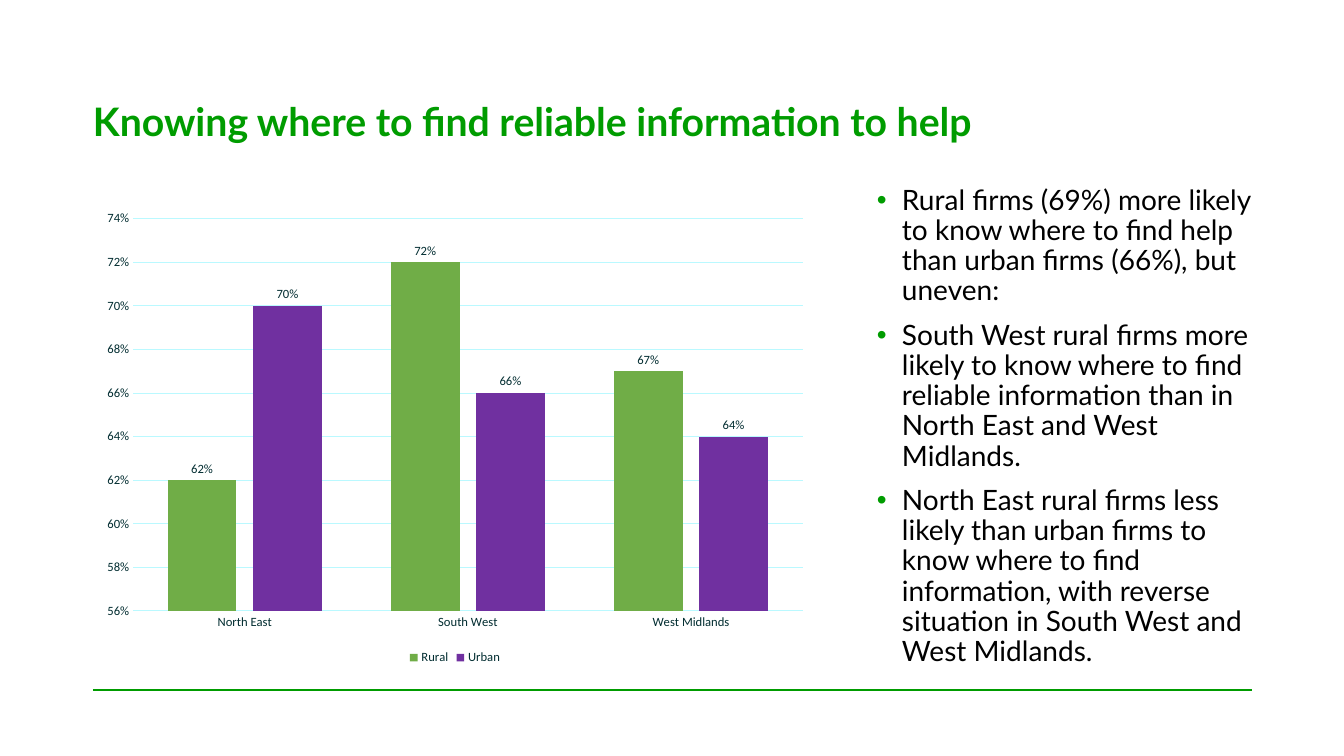
import pptx
import pptx.chart.data
import pptx.dml.color
import pptx.enum.chart
import pptx.enum.shapes
import pptx.enum.text
import pptx.oxml
import pptx.oxml.ns
import pptx.util

TITLE = "Knowing where to find reliable information to help"
FINDINGS = [
    "Rural firms (69%) more likely to know where to find help than urban firms (66%), but uneven:",
    "South West rural firms more likely to know where to find reliable information than in North East and West Midlands.",
    "North East rural firms less likely than urban firms to know where to find information, "
    "with reverse situation in South West and West Midlands.",
]
REGIONS = ["North East", "South West", "West Midlands"]
SERIES = [
    ("Rural", [0.62, 0.72, 0.67], "70AD47"),
    ("Urban", [0.70, 0.66, 0.64], "7030A0"),
]
THEME = {
    "green": "009C00", "text": "000000", "chart_text": "002C30", "grid": "BAF9FF",
    "font": "Lato", "chart_font": "Calibri",
    "title_size": 28, "body_size": 20, "chart_size": 9,
}

SLIDE_WIDTH, SLIDE_HEIGHT = 1344, 756
LEFT, RIGHT = 93, 1252
TITLE_BOX = (LEFT, 73, RIGHT - LEFT, 114)
TITLE_GAP = 42
BODY_BOX = (877, 186, RIGHT - 877, 433)
CHART_BOX = (LEFT, 202, 724, 467)
RULE_Y = 690
INDENT = 25


def px(length):
    return pptx.util.Emu(round(length * 12192000 / SLIDE_WIDTH))


def color(name):
    return pptx.dml.color.RGBColor.from_string(THEME.get(name, name))


def style_font(font, family, size, color_name, bold=False):
    font.name = THEME[family]
    font.size = pptx.util.Pt(THEME[size])
    font.color.rgb = color(color_name)
    font.bold = bold


def style_line(line, color_name, width):
    line.color.rgb = color(color_name)
    line.width = pptx.util.Pt(width)


def add_text(slide, box, text):
    frame = slide.shapes.add_textbox(*map(px, box)).text_frame
    frame.word_wrap = True
    frame.margin_left = frame.margin_right = frame.margin_top = frame.margin_bottom = 0
    frame.text = text
    for paragraph in frame.paragraphs:
        paragraph.line_spacing = 0.9
    return frame


def add_bullet(paragraph):
    properties = paragraph._p.get_or_add_pPr()
    properties.set("marL", str(px(INDENT)))
    properties.set("indent", str(-px(INDENT)))
    namespace = pptx.oxml.ns.nsdecls("a")
    for xml in (
        f'<a:buClr {namespace}><a:srgbClr val="{THEME["green"]}"/></a:buClr>',
        f'<a:buFont {namespace} typeface="Arial"/>',
        f'<a:buChar {namespace} char="•"/>',
    ):
        properties.append(pptx.oxml.parse_xml(xml))


def add_rule(slide):
    rule = slide.shapes.add_connector(
        pptx.enum.shapes.MSO_CONNECTOR.STRAIGHT, px(LEFT), px(RULE_Y), px(RIGHT), px(RULE_Y))
    style_line(rule.line, "green", 1)
    rule._element.spPr.append(
        pptx.oxml.parse_xml(f'<a:effectLst {pptx.oxml.ns.nsdecls("a")}/>'))


def add_title(slide):
    frame = add_text(slide, TITLE_BOX, TITLE)
    frame.vertical_anchor = pptx.enum.text.MSO_ANCHOR.BOTTOM
    frame.margin_bottom = px(TITLE_GAP)
    style_font(frame.paragraphs[0].runs[0].font, "font", "title_size", "green", True)


def add_findings(slide):
    frame = add_text(slide, BODY_BOX, "\n".join(FINDINGS))
    for index, paragraph in enumerate(frame.paragraphs):
        add_bullet(paragraph)
        paragraph.space_before = pptx.util.Pt(10 if index else 0)
        style_font(paragraph.runs[0].font, "font", "body_size", "text")


def add_region_chart(slide):
    chart_data = pptx.chart.data.CategoryChartData(number_format="0%")
    chart_data.categories = REGIONS
    for name, values, _ in SERIES:
        chart_data.add_series(name, values)
    chart = slide.shapes.add_chart(
        pptx.enum.chart.XL_CHART_TYPE.COLUMN_CLUSTERED, *map(px, CHART_BOX), chart_data).chart
    style_font(chart.font, "chart_font", "chart_size", "chart_text")
    chart.has_title = False
    chart.has_legend = True
    chart.legend.position = pptx.enum.chart.XL_LEGEND_POSITION.BOTTOM
    chart.legend.include_in_layout = False
    style_font(chart.legend.font, "chart_font", "chart_size", "chart_text")

    for axis in (chart.category_axis, chart.value_axis):
        axis.major_tick_mark = axis.minor_tick_mark = pptx.enum.chart.XL_TICK_MARK.NONE
        style_font(axis.tick_labels.font, "chart_font", "chart_size", "chart_text")
    style_line(chart.category_axis.format.line, "grid", 0.75)
    value_axis = chart.value_axis
    value_axis.minimum_scale, value_axis.maximum_scale, value_axis.major_unit = 0.56, 0.74, 0.02
    value_axis.tick_labels.number_format = "0%"
    value_axis.tick_labels.number_format_is_linked = False
    value_axis.format.line.fill.background()
    style_line(value_axis.major_gridlines.format.line, "grid", 0.75)

    plot = chart.plots[0]
    plot.gap_width, plot.overlap = 100, -24
    plot.vary_by_categories = False
    for series, (_, _, fill) in zip(plot.series, SERIES):
        series.invert_if_negative = False
        series.format.fill.solid()
        series.format.fill.fore_color.rgb = color(fill)
        labels = series.data_labels
        labels.show_value = True
        labels.number_format = "0%"
        labels.number_format_is_linked = False
        labels.position = pptx.enum.chart.XL_LABEL_POSITION.OUTSIDE_END
        style_font(labels.font, "chart_font", "chart_size", "chart_text")


def main():
    presentation = pptx.Presentation()
    presentation.slide_width, presentation.slide_height = px(SLIDE_WIDTH), px(SLIDE_HEIGHT)
    slide = presentation.slides.add_slide(presentation.slide_layouts[6])
    add_rule(slide)
    add_title(slide)
    add_findings(slide)
    add_region_chart(slide)
    presentation.save("out.pptx")


if __name__ == "__main__":
    main()
